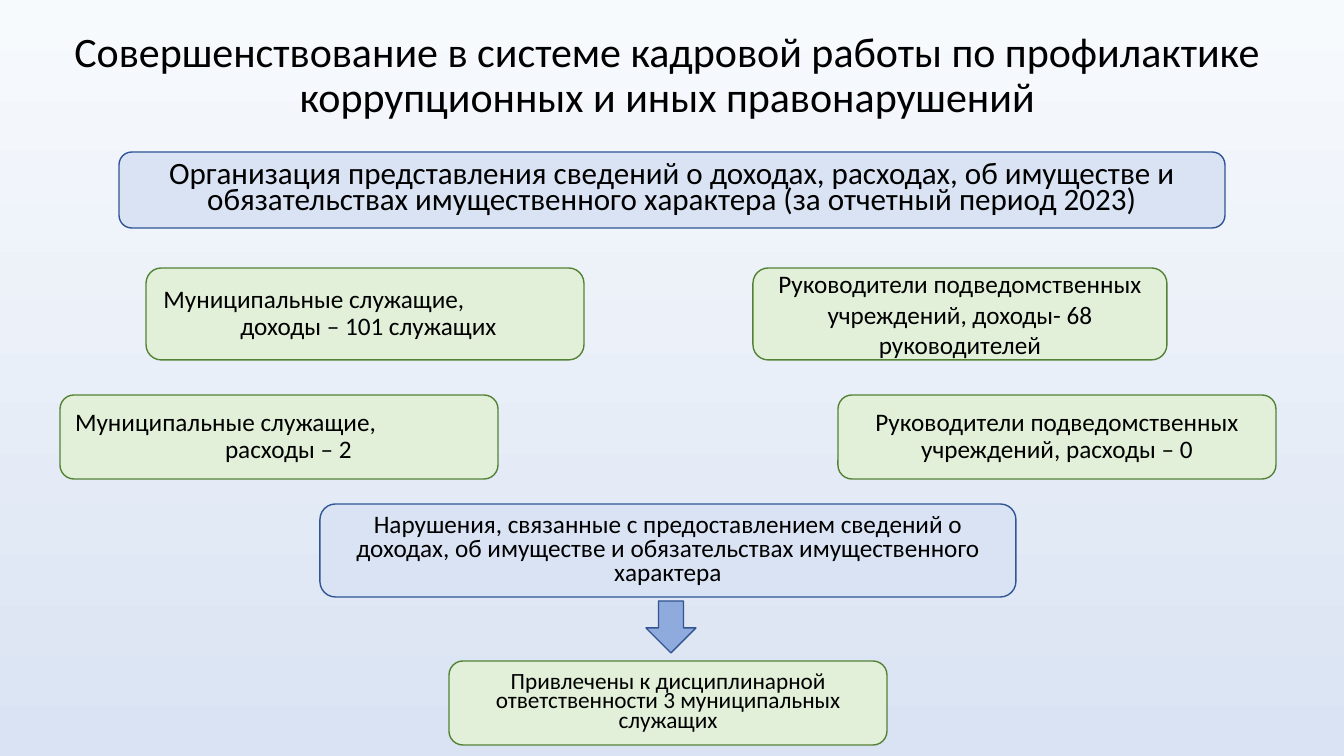
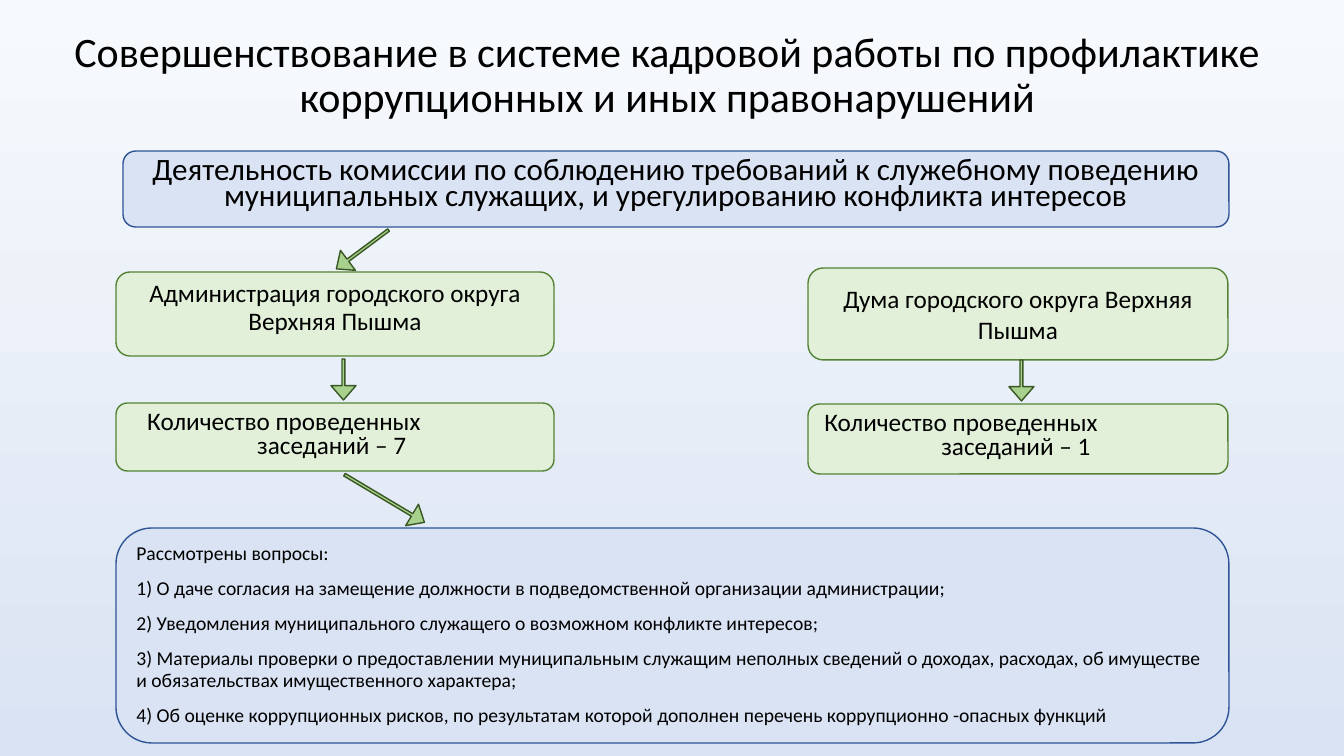
from dataclasses import dataclass

from pptx import Presentation
from pptx.dml.color import RGBColor
from pptx.enum.shapes import MSO_SHAPE
from pptx.enum.text import MSO_ANCHOR, MSO_AUTO_SIZE, PP_ALIGN
from pptx.util import Pt

EMU_PER_PX = 12192000 / 1344


@dataclass(frozen=True)
class Theme:
    font: str = "Calibri"
    ink: str = "000000"
    sky: tuple = ("F7FAFD", "DAE3F3")
    blue: tuple = ("DAE3F3", "2F5597")
    green: tuple = ("E2F0D9", "548235")
    blue_arrow: tuple = ("8FAADC", "325491")
    green_arrow: tuple = ("A9D18E", "385723")
    title: float = 30
    heading: float = 22.2
    body: float = 18
    result: float = 16.6
    issue: float = 14


def px(*lengths):
    return [round(length * EMU_PER_PX) for length in lengths]


def add_block(slide, preset, place, colours):
    block = slide.shapes.add_shape(preset, *px(*place))
    block.shadow.inherit = False
    fill, outline = colours
    block.fill.solid()
    block.fill.fore_color.rgb = RGBColor.from_string(fill)
    block.line.color.rgb = RGBColor.from_string(outline)
    block.line.width = Pt(1)
    return block


theme = Theme()
TOP, MIDDLE = MSO_ANCHOR.TOP, MSO_ANCHOR.MIDDLE
CENTRED = None
HEADLINE = "Совершенствование в системе кадровой работы по профилактике коррупционных и иных правонарушений"

# Each box: place, colours, size, line spacing, anchor, space before, (text, indent) lines
declarations = [
    ((146, 268, 438, 92), theme.green, theme.body, 0.9, MIDDLE, 0,
     [("Муниципальные служащие,", 3), ("доходы – 101 служащих", 80)]),
    ((753, 268, 414, 92), theme.green, theme.body, 1.0, MIDDLE, 0,
     [("Руководители подведомственных учреждений, доходы- 68 руководителей", CENTRED)]),
    ((60, 395, 438, 84), theme.green, theme.body, 0.9, MIDDLE, 0,
     [("Муниципальные служащие,", 1), ("расходы – 2", 151)]),
    ((838, 395, 438, 84), theme.green, theme.body, 0.9, MIDDLE, 0,
     [("Руководители подведомственных учреждений, расходы – 0", CENTRED)]),
    ((119, 152, 1106, 76), theme.blue, theme.heading, 0.7, MIDDLE, 0,
     [("Организация представления сведений о доходах, расходах, об имуществе и обязательствах "
       "имущественного характера (за отчетный период 2023)", CENTRED)]),
    ((320, 504, 696, 93), theme.blue, theme.body, 0.8, MIDDLE, 0,
     [("Нарушения, связанные с предоставлением сведений о доходах, об имуществе и обязательствах "
       "имущественного характера", CENTRED)]),
    ((449, 661, 438, 84), theme.green, theme.result, 0.7, MIDDLE, 0,
     [("Привлечены к дисциплинарной ответственности 3 муниципальных служащих", CENTRED)]),
]

commission = [
    ((116, 272, 438, 84), theme.green, theme.body, 0.9, TOP, 0,
     [("Администрация городского округа Верхняя Пышма", CENTRED)]),
    ((808, 268, 420, 92), theme.green, theme.body, 1.0, MIDDLE, 0,
     [("Дума городского округа Верхняя Пышма", CENTRED)]),
    ((116, 403, 438, 68), theme.green, theme.body, 0.8, TOP, 0,
     [("Количество проведенных", 18), ("заседаний – 7", 128)]),
    ((808, 404, 420, 70), theme.green, theme.body, 0.8, TOP, 0,
     [("Количество проведенных", 3), ("заседаний – 1", 120)]),
    ((123, 151, 1106, 76), theme.blue, theme.heading, 0.7, TOP, 0,
     [("Деятельность комиссии по соблюдению требований к служебному поведению муниципальных "
       "служащих, и урегулированию конфликта интересов", CENTRED)]),
    ((116, 528, 1113, 215), theme.blue, theme.issue, 0.9, TOP, 10,
     [("Рассмотрены вопросы:", 0),
      ("1) О даче согласия на замещение должности в подведомственной организации администрации;", 0),
      ("2) Уведомления муниципального служащего о возможном конфликте интересов;", 0),
      ("3) Материалы проверки о предоставлении муниципальным служащим неполных сведений о доходах, "
       "расходах, об имуществе и обязательствах имущественного характера;", 0),
      ("4) Об оценке коррупционных рисков, по результатам которой дополнен перечень "
       "коррупционно -опасных функций", 0)]),
]

wide_head = (0.5, 0.5)
slim_head = (0.115, 0.574)
violation_arrows = [((646, 601, 50, 52), 0, theme.blue_arrow, wide_head)]
meeting_arrows = [
    ((1009, 360, 25, 41), 0, theme.green_arrow, slim_head),
    ((372, 452, 25, 93), 300.8, theme.green_arrow, slim_head),
    ((350, 217, 25, 65), 53.3, theme.green_arrow, slim_head),
    ((331, 359, 25, 41), 0, theme.green_arrow, slim_head),
]

prs = Presentation()
prs.slide_width, prs.slide_height = px(1344, 756)

sky = prs.slide_master.background.fill
sky.gradient()
sky.gradient_angle = 270
for stop, colour in zip(sky.gradient_stops, theme.sky):
    stop.color.rgb = RGBColor.from_string(colour)

for boxes, arrows in ((declarations, violation_arrows), (commission, meeting_arrows)):
    slide = prs.slides.add_slide(prs.slide_layouts[5])
    title = slide.shapes.title
    title.left, title.top, title.width, title.height = px(60, 24, 1215, 105)
    title.text_frame.text = HEADLINE
    title.text_frame.auto_size = MSO_AUTO_SIZE.NONE
    title.text_frame.vertical_anchor = MIDDLE
    headline = title.text_frame.paragraphs[0]
    headline.alignment = PP_ALIGN.CENTER
    headline.line_spacing = 0.9
    headline.font.name = theme.font
    headline.font.size = Pt(theme.title)
    headline.font.color.rgb = RGBColor.from_string(theme.ink)

    for place, colours, size, spacing, anchor, gap, lines in boxes:
        frame = add_block(slide, MSO_SHAPE.ROUNDED_RECTANGLE, place, colours).text_frame
        frame.word_wrap = True
        frame.vertical_anchor = anchor
        frame.text = "\n".join(text for text, indent in lines)
        for paragraph, (text, indent) in zip(frame.paragraphs, lines):
            paragraph.line_spacing = spacing
            paragraph.space_before = Pt(gap)
            paragraph.font.name = theme.font
            paragraph.font.size = Pt(size)
            paragraph.font.color.rgb = RGBColor.from_string(theme.ink)
            if indent is CENTRED:
                paragraph.alignment = PP_ALIGN.CENTER
            else:
                paragraph.alignment = PP_ALIGN.LEFT
                paragraph._p.get_or_add_pPr().set("marL", str(px(indent)[0]))

    for place, rotation, colours, head in arrows:
        arrow = add_block(slide, MSO_SHAPE.DOWN_ARROW, place, colours)
        arrow.rotation = rotation
        arrow.adjustments[0], arrow.adjustments[1] = head

prs.save("out.pptx")
